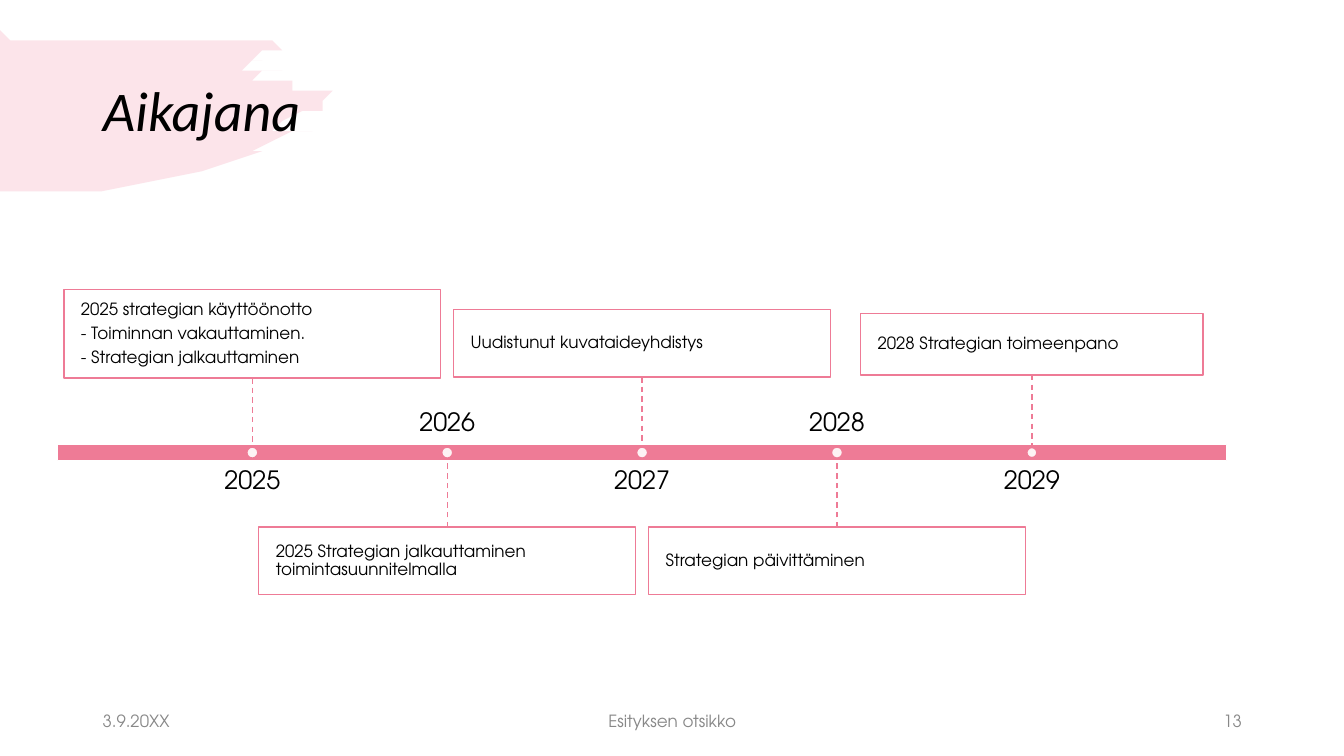
from dataclasses import dataclass

import pptx
import pptx.dml.color
import pptx.enum.dml
import pptx.enum.shapes
import pptx.enum.text
import pptx.oxml.ns
import pptx.util
from lxml import etree

COLORS = {"pink": "EE7B96", "brush": "F07C98", "white": "FFFFFF",
          "black": "000000", "gray": "888888"}
FONT = "TeX Gyre Adventor"
SHAPE = pptx.enum.shapes.MSO_SHAPE
ALIGN = pptx.enum.text.PP_ALIGN
ANCHOR = pptx.enum.text.MSO_ANCHOR

# The grid has ten columns and ten rows to the inch.
GRID = 10
COLS, ROWS = 133.33, 75
BAR_LEFT, BAR_WIDTH, BAR_HEIGHT = 5.7, 116, 1.6
AXIS = 44.9
STEP = BAR_WIDTH / 6
LABEL_WIDTH, LABEL_HEIGHT = 30.9, 4.6
LABEL_ABOVE, LABEL_BELOW = 38.8, 46.4


@dataclass
class Milestone:
    year: str
    lines: list[str]
    top: float
    width: float = 37.4
    height: float = 6.7
    dot: float = 1.1


@dataclass
class FooterItem:
    text: str
    left: float
    width: float
    align: ALIGN


MILESTONES = [
    Milestone("2025", ["2025 strategian käyttöönotto", "- Toiminnan vakauttaminen.",
                       "- Strategian jalkauttaminen"], 28.7, height=8.8),
    Milestone("2026", ["2025 Strategian jalkauttaminen toimintasuunnitelmalla"], 52.3),
    Milestone("2027", ["Uudistunut kuvataideyhdistys"], 30.7),
    Milestone("2028", ["Strategian päivittäminen"], 52.3),
    Milestone("2029", ["2028 Strategian toimeenpano"], 31.1, width=34, height=6.1, dot=1),
]

FOOTER = [
    FooterItem("3.9.20XX", 9.2, 30, ALIGN.LEFT),
    FooterItem("Esityksen otsikko", 44.2, 45, ALIGN.CENTER),
    FooterItem("13", 94.2, 30, ALIGN.RIGHT),
]

BRUSH = [
    (0, 3.4), (0.6, 3.5), (2.5, 3.7), (6.6, 3.8), (10.2, 3.7), (15.1, 3.8), (19.4, 4.1),
    (24.8, 4.1), (26.4, 4.1), (27.4, 4.3), (28, 4.7), (27.1, 4.9), (25.5, 5.4), (25.3, 5.7),
    (25.6, 5.9), (26.2, 6.2), (25, 6.2), (23.8, 6.6), (24.6, 6.8), (25.6, 7), (26.6, 7.1),
    (27.5, 7.4), (26.3, 7.4), (25.1, 7.5), (26.3, 7.8), (27.3, 8.1), (28, 8.2), (28.8, 8.3),
    (29, 8.5), (28.7, 8.8), (28.4, 8.8), (26.3, 8.8), (29.6, 9.2), (33, 9.4), (32.1, 9.7),
    (32.2, 10.3), (31.8, 10.6), (30.7, 11.1), (30, 11.3), (28.3, 11.6), (28, 12),
    (27.8, 12.5), (27.4, 12.8), (29.1, 12.7), (30.8, 12.8), (28.9, 13.3), (26.9, 13.8),
    (27.3, 14.2), (25.2, 14.8), (26.3, 14.8), (23.3, 16), (19.7, 17.2), (14.8, 18.1),
    (10.2, 18.8), (6.5, 19.1), (2.3, 19), (0.7, 18.9), (0, 18.8),
]


def grid(n: float) -> pptx.util.Emu:
    return pptx.util.Emu(round(n * pptx.util.Inches(1) / GRID))


def rgb(name: str) -> pptx.dml.color.RGBColor:
    return pptx.dml.color.RGBColor.from_string(COLORS[name])


def set_fill(sp, color: str, opacity: int = 100) -> None:
    sp.fill.solid()
    sp.fill.fore_color.rgb = rgb(color)
    if opacity < 100:
        clr = sp._element.spPr.find(".//" + pptx.oxml.ns.qn("a:srgbClr"))
        etree.SubElement(clr, pptx.oxml.ns.qn("a:alpha"), val=str(opacity * 1000))


def write(sp, lines: list[str], *, size: float = 12, font: str = FONT, color: str = "black",
          italic: bool = False, align=ALIGN.LEFT, anchor=ANCHOR.MIDDLE,
          margins: tuple[float, float] = (1, 0.5), spacing: float = 0.9,
          before: float = 0) -> None:
    """Fill a shape with paragraphs; margins are (sides, top and bottom) in grid units."""
    tf = sp.text_frame
    tf.word_wrap = True
    tf.auto_size = pptx.enum.text.MSO_AUTO_SIZE.NONE
    tf.vertical_anchor = anchor
    tf.margin_left = tf.margin_right = grid(margins[0])
    tf.margin_top = tf.margin_bottom = grid(margins[1])
    for i, line in enumerate(lines):
        p = tf.add_paragraph() if i else tf.paragraphs[0]
        p.alignment = align
        p.line_spacing = spacing
        p.space_before = pptx.util.Pt(before if i else 0)
        r = p.add_run()
        r.text = line
        r.font.size = pptx.util.Pt(size)
        r.font.name = font
        r.font.italic = italic
        r.font.color.rgb = rgb(color)


def add_shape(slide, kind, left: float, top: float, width: float, height: float,
              fill: str, line: str, opacity: int = 100):
    sp = slide.shapes.add_shape(kind, grid(left), grid(top), grid(width), grid(height))
    sp.shadow.inherit = False
    set_fill(sp, fill, opacity)
    sp.line.color.rgb = rgb(line)
    sp.line.width = pptx.util.Pt(1)
    return sp


def add_text(slide, left: float, top: float, width: float, height: float, text: str,
             **fmt) -> None:
    sp = slide.shapes.add_textbox(grid(left), grid(top), grid(width), grid(height))
    write(sp, [text], **fmt)


def add_brush(slide) -> None:
    """Draw the brush stroke behind the title."""
    builder = slide.shapes.build_freeform(*BRUSH[0], scale=pptx.util.Inches(1) / GRID)
    builder.add_line_segments(BRUSH[1:], close=True)
    sp = builder.convert_to_shape()
    sp.shadow.inherit = False
    set_fill(sp, "brush", 20)
    sp.line.fill.background()
    slide.shapes._spTree.insert(2, sp._element)


def add_stem(slide, box, x: float, side: int) -> None:
    """Join a side of the box to the timeline with a dashed line."""
    cx = slide.shapes.add_connector(pptx.enum.shapes.MSO_CONNECTOR.STRAIGHT,
                                    grid(x), grid(AXIS), grid(x), grid(AXIS))
    cx.begin_connect(box, side)
    cx.line.color.rgb = rgb("pink")
    cx.line.width = pptx.util.Pt(1)
    cx.line.dash_style = pptx.enum.dml.MSO_LINE.DASH
    etree.SubElement(cx._element.spPr, pptx.oxml.ns.qn("a:effectLst"))


def add_milestone(slide, m: Milestone, x: float) -> None:
    above = m.top < AXIS
    box = add_shape(slide, SHAPE.RECTANGLE, x - m.width / 2, m.top, m.width, m.height,
                    "white", "pink", 90)
    write(box, m.lines, margins=(1.7, 0.4), before=4.2)
    add_stem(slide, box, x, 2 if above else 0)
    add_text(slide, x - LABEL_WIDTH / 2, LABEL_BELOW if above else LABEL_ABOVE,
             LABEL_WIDTH, LABEL_HEIGHT, m.year, size=18, align=ALIGN.CENTER,
             anchor=ANCHOR.TOP if above else ANCHOR.BOTTOM, margins=(0, 0))
    add_shape(slide, SHAPE.OVAL, x - m.dot / 2, AXIS - m.dot / 2, m.dot, m.dot,
              "white", "pink", 90)


def main() -> None:
    prs = pptx.Presentation()
    prs.slide_width, prs.slide_height = grid(COLS), grid(ROWS)
    slide = prs.slides.add_slide(prs.slide_layouts[5])
    add_brush(slide)

    title = slide.shapes.title
    title.left, title.top, title.width, title.height = map(grid, (9.2, 4, 115, 14.5))
    write(title, ["Aikajana"], size=40, font="Calibri", italic=True)

    add_shape(slide, SHAPE.RECTANGLE, BAR_LEFT, AXIS - BAR_HEIGHT / 2, BAR_WIDTH, BAR_HEIGHT,
              "pink", "white")
    for i, m in enumerate(MILESTONES, start=1):
        add_milestone(slide, m, BAR_LEFT + i * STEP)

    for item in FOOTER:
        add_text(slide, item.left, 69.5, item.width, 4, item.text, color="gray",
                 align=item.align, spacing=1)
    prs.save("out.pptx")


if __name__ == "__main__":
    main()
